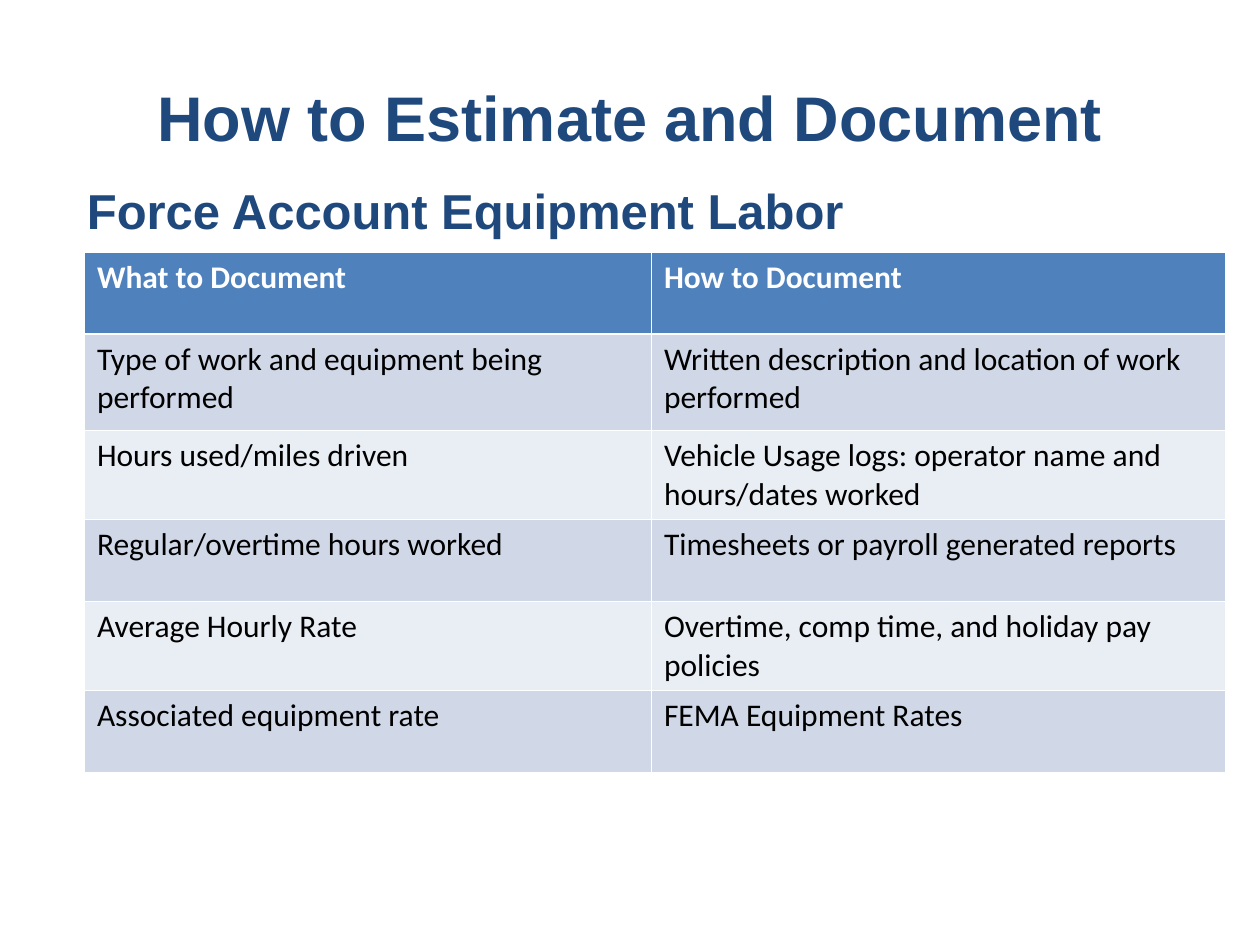
"""Build a slide with a table on documenting force account equipment labor."""
import pptx
import pptx.dml.color
import pptx.enum.text
import pptx.util
from dataclasses import dataclass

Pt = pptx.util.Pt
Color = pptx.dml.color.RGBColor.from_string
Align = pptx.enum.text.PP_ALIGN
Anchor = pptx.enum.text.MSO_ANCHOR


@dataclass
class Theme:
    navy: str = "1F497D"
    blue: str = "4F81BD"
    dark: str = "D0D8E8"
    light: str = "E9EDF4"
    white: str = "FFFFFF"
    black: str = "000000"
    head: str = "Arial"
    body: str = "Calibri"
    title: int = 36
    sub: int = 28
    cell: int = 18


theme = Theme()


def style(para, face, size, color, bold):
    for run in para.runs:
        font = run.font
        font.name, font.size, font.bold = face, Pt(size), bold
        font.color.rgb = Color(color)


deck = pptx.Presentation()
deck.slide_width, deck.slide_height = Pt(720), Pt(540)
slide = deck.slides.add_slide(deck.slide_layouts[6])

heads = [
    ("How to Estimate and Document", (36, 21.6, 648, 90), theme.title,
     Align.CENTER, Anchor.MIDDLE, 7.2, 3.6),
    ("Force Account Equipment Labor", (38.16, 95.76, 660, 356.4), theme.sub,
     Align.LEFT, Anchor.TOP, 11.5, 7.6),
]
for text, place, size, align, anchor, left, top in heads:
    box = slide.shapes.add_textbox(*map(Pt, place))
    frame = box.text_frame
    frame.word_wrap = True
    frame.vertical_anchor = anchor
    frame.margin_left, frame.margin_top = Pt(left), Pt(top)
    frame.text = text
    para = frame.paragraphs[0]
    para.alignment = align
    style(para, theme.head, size, theme.navy, True)

rows = [
    ("What to Document", "How to Document", 46.8),
    ("Type of work and equipment being performed",
     "Written description and location of work performed", 55.1),
    ("Hours used/miles driven",
     "Vehicle Usage logs: operator name and hours/dates worked", 51),
    ("Regular/overtime hours worked",
     "Timesheets or payroll generated reports", 46.8),
    ("Average Hourly Rate",
     "Overtime, comp time, and holiday pay policies", 51),
    ("Associated equipment rate", "FEMA Equipment Rates", 46.8),
]
widths = (324, 328.3)
high = sum(row[-1] for row in rows)
table = slide.shapes.add_table(
    len(rows), len(widths), Pt(48.24), Pt(144), Pt(sum(widths)), Pt(high)).table
for col, width in zip(table.columns, widths):
    col.width = Pt(width)
for i, (*texts, height) in enumerate(rows):
    table.rows[i].height = Pt(height)
    first = i == 0
    fill = theme.blue if first else theme.dark if i % 2 else theme.light
    ink = theme.white if first else theme.black
    for j, text in enumerate(texts):
        cell = table.cell(i, j)
        cell.fill.solid()
        cell.fill.fore_color.rgb = Color(fill)
        cell.text_frame.text = text
        style(cell.text_frame.paragraphs[0], theme.body, theme.cell, ink, first)

deck.save("out.pptx")
